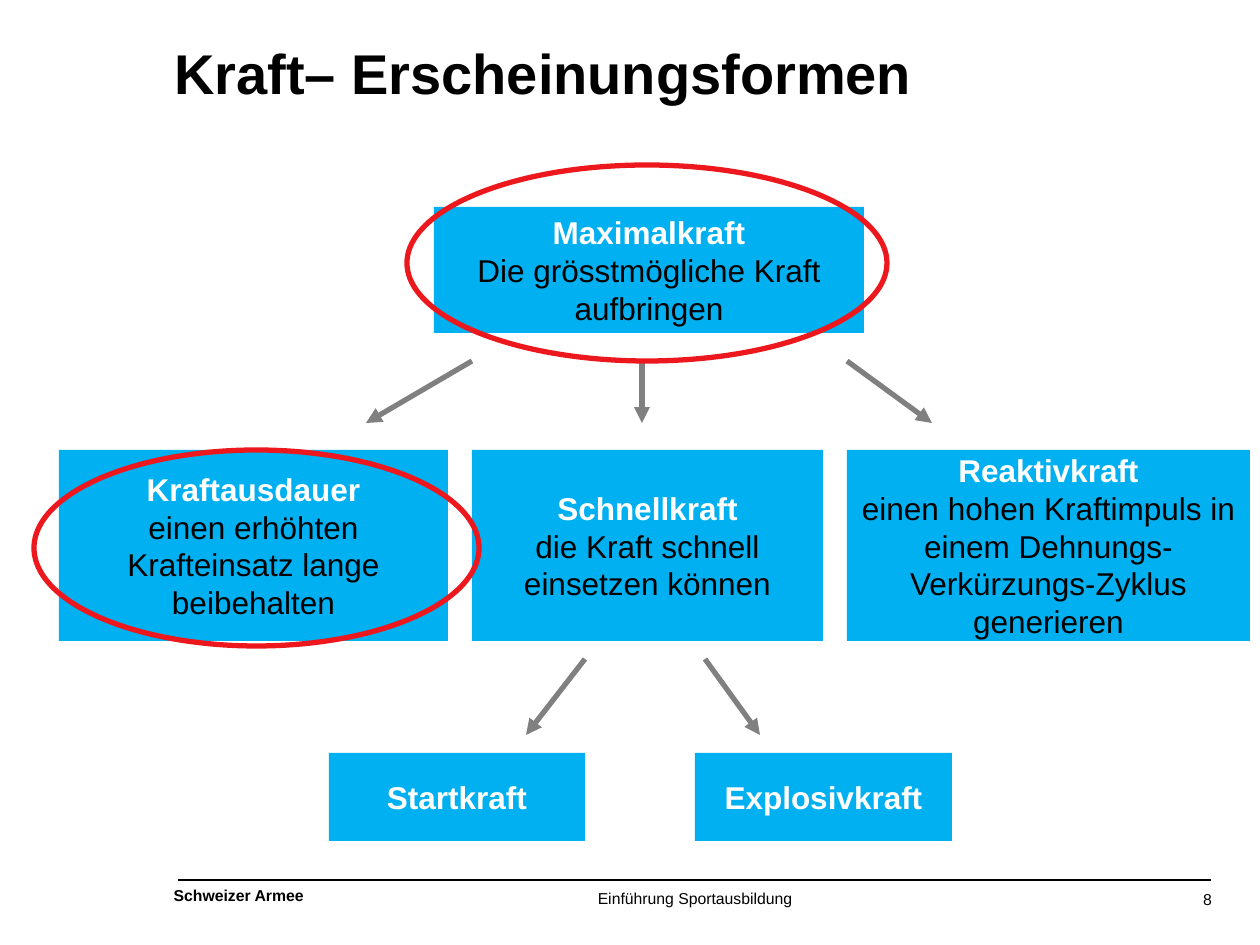
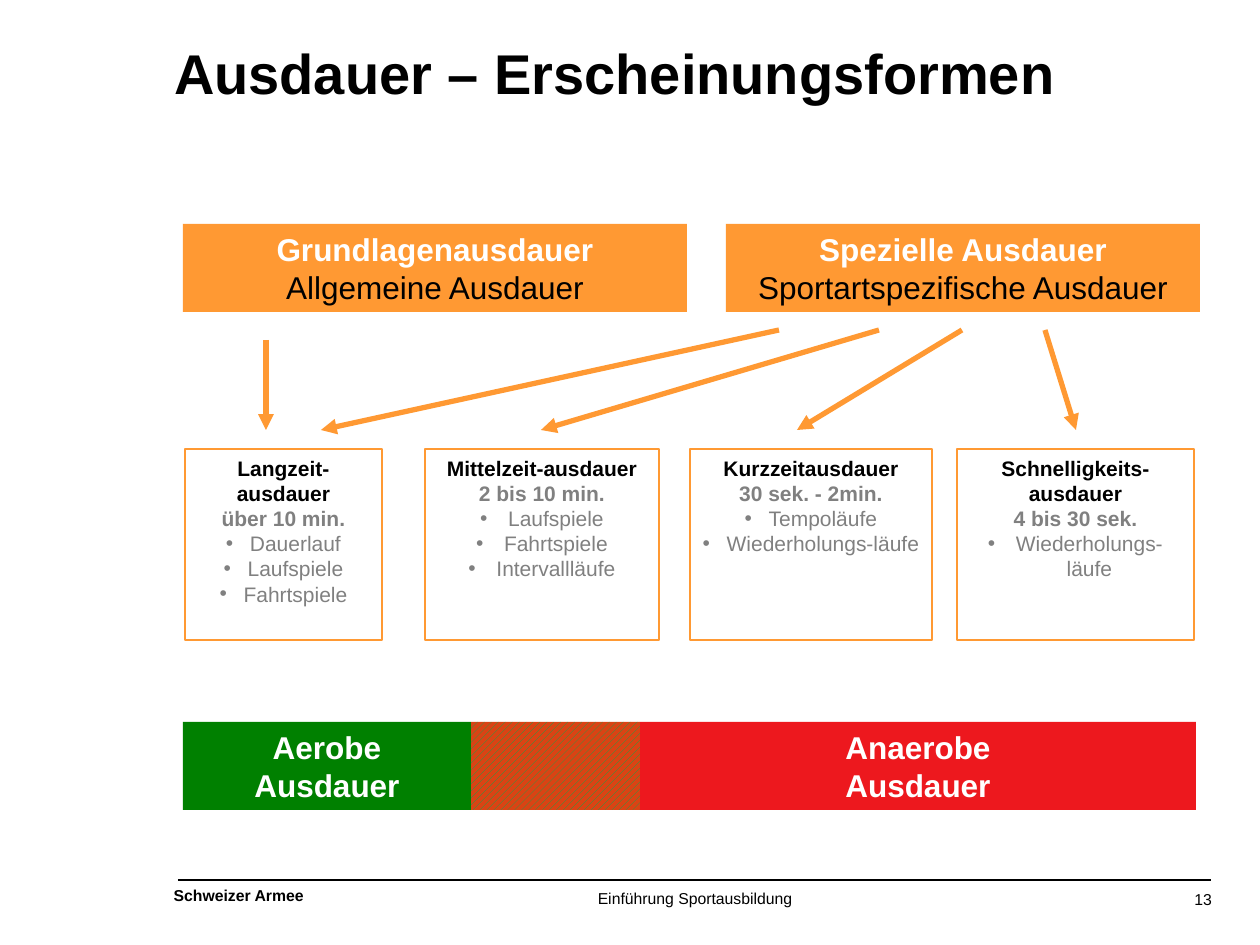
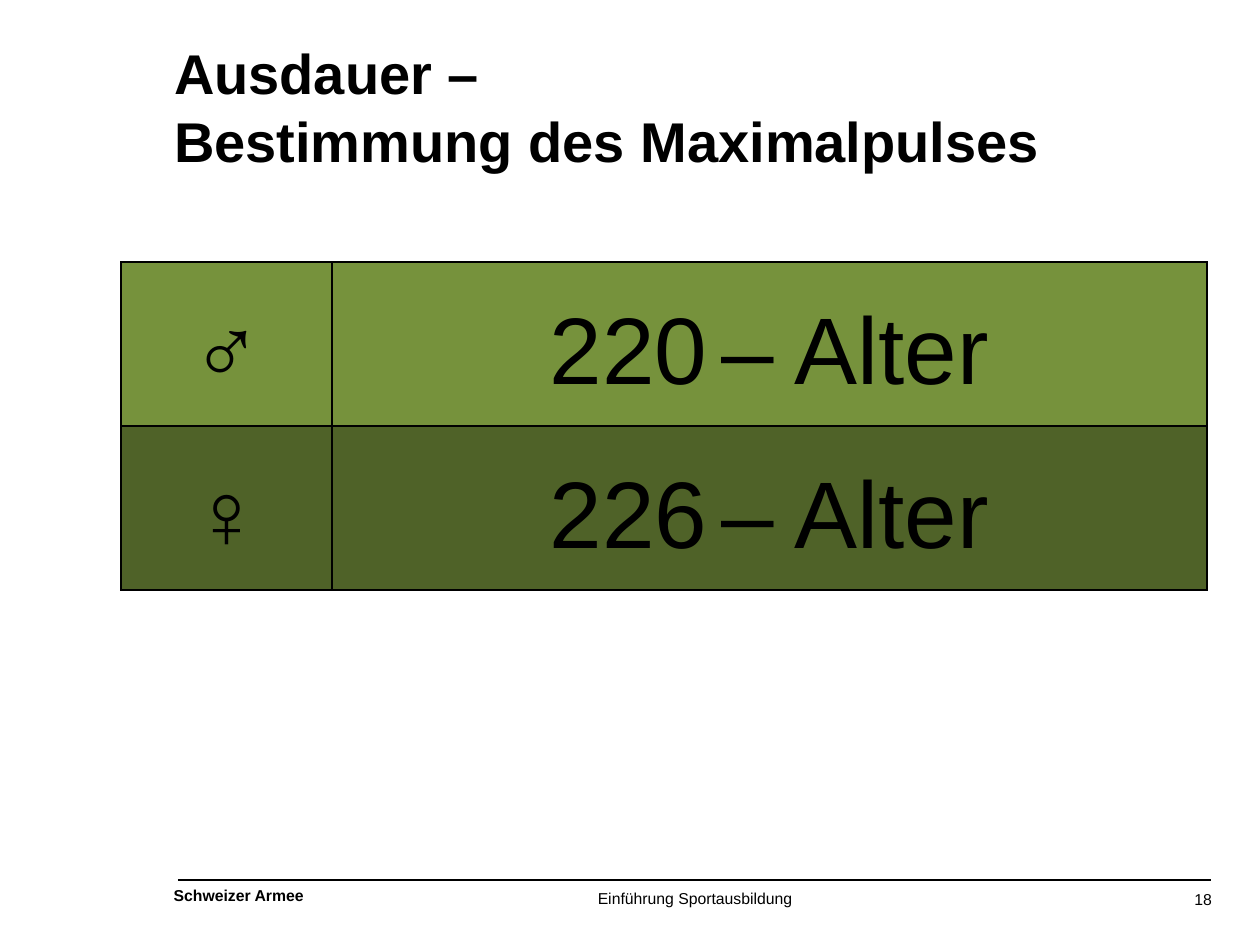
from lxml.etree import SubElement
from pptx import Presentation
from pptx.dml.color import RGBColor
from pptx.enum.dml import MSO_PATTERN
from pptx.enum.shapes import MSO_CONNECTOR, MSO_SHAPE
from pptx.enum.text import MSO_ANCHOR as ANCHOR, PP_ALIGN as ALIGN
from pptx.oxml.ns import qn
from pptx.util import Emu, Pt

BLACK = RGBColor(0x00, 0x00, 0x00)
WHITE = RGBColor(0xFF, 0xFF, 0xFF)
GREY = RGBColor(0x80, 0x80, 0x80)
BLUE = RGBColor(0x00, 0xB0, 0xF0)
RED = RGBColor(0xED, 0x18, 0x1E)
ORANGE = RGBColor(0xFF, 0x99, 0x33)
GREEN = RGBColor(0x00, 0x80, 0x00)
HATCH_GREEN = RGBColor(0x00, 0xB0, 0x50)
HATCH_RED = RGBColor(0xDA, 0x43, 0x14)
OLIVE = RGBColor(0x76, 0x92, 0x3C)
DARK_OLIVE = RGBColor(0x4F, 0x62, 0x28)

FONT = "Arial"
# (text, bold, box)
FOOTERS = [
    ("Schweizer Armee", True, (170, 882, 140, 26)),
    ("Einführung Sportausbildung", False, (590, 881, 212, 54)),
]

# Strength: (heading, explanation, box)
STRENGTH_BOXES = [
    ("Maximalkraft", "Die grösstmögliche Kraft aufbringen", (434, 207, 430, 126)),
    ("Kraftausdauer", "einen erhöhten Krafteinsatz lange beibehalten", (59, 450, 389, 191)),
    ("Schnellkraft", "die Kraft schnell einsetzen können", (472, 450, 351, 191)),
    ("Reaktivkraft", "einen hohen Kraftimpuls in einem Dehnungs-Verkürzungs-Zyklus generieren",
     (847, 450, 403, 191)),
    ("Startkraft", "", (329, 753, 256, 88)),
    ("Explosivkraft", "", (695, 753, 257, 88)),
]
STRENGTH_ARROWS = [
    (642, 360, 642, 423), (472, 361, 366, 423), (847, 361, 932, 423),
    (585, 659, 526, 735), (705, 659, 760, 735),
]
HIGHLIGHTS = [(407, 165, 480, 196), (34, 450, 445, 196)]

# Endurance
ENDURANCE_KINDS = [
    ("Grundlagenausdauer", "Allgemeine Ausdauer", (183, 224, 504, 88)),
    ("Spezielle Ausdauer", "Sportartspezifische Ausdauer", (726, 224, 474, 88)),
]
SPECIAL_ARROWS = [(779, 321), (879, 541), (962, 797), (1045, 1076)]  # from x, to x
BASIC_ARROW = (266, 340, 266, 430)
# (left, width, heading, duration, bullet indent, exercises)
DURATIONS = [
    (185, 197, "Langzeit-ausdauer", "über 10 min.", 24, ["Dauerlauf", "Laufspiele", "Fahrtspiele"]),
    (425, 234, "Mittelzeit-ausdauer", "2 bis 10 min.", 28,
     ["Laufspiele", "Fahrtspiele", "Intervallläufe"]),
    (690, 242, "Kurzzeitausdauer", "30 sek. - 2min.", 24, ["Tempoläufe", "Wiederholungs-läufe"]),
    (957, 237, "Schnelligkeits-ausdauer", "4 bis 30 sek.", 28, ["Wiederholungs-läufe"]),
]
AEROBIC, MIXED, ANAEROBIC = [(x, 722, w, 88) for x, w in ((183, 288), (471, 169), (640, 556))]

# Maximum pulse: (sign, number, fill)
PULSE_ROWS = [("♂", "220", OLIVE), ("♀", "226", DARK_OLIVE)]
PULSE_COLS = (211, 875)
PULSE_ROW_H = 164


def px(n):
    return Emu(round(n * 914400 / 126))


def add_text(p, text, size, color=BLACK, bold=False):
    for i, part in enumerate(text.split("\n")):
        if i:
            p.add_line_break()
        r = p.add_run()
        r.text = part
        f = r.font
        f.name, f.size, f.bold = FONT, Pt(size), bold
        f.color.rgb = color


def add_label(sp, text, size, bold=False, align=ALIGN.LEFT, wrap=False):
    """Write one paragraph at the top of a shape, without margins."""
    tf = sp.text_frame
    tf.margin_left = tf.margin_right = tf.margin_top = tf.margin_bottom = 0
    tf.word_wrap = wrap
    tf.vertical_anchor = ANCHOR.TOP
    tf.paragraphs[0].alignment = align
    add_text(tf.paragraphs[0], text, size, bold=bold)


def add_shape(slide, box, fill=None, line=None, width=0.75, kind=MSO_SHAPE.RECTANGLE):
    sp = slide.shapes.add_shape(kind, *map(px, box))
    sp.shadow.inherit = False
    if fill is None:
        sp.fill.background()
    else:
        sp.fill.solid()
        sp.fill.fore_color.rgb = fill
    if line is None:
        sp.line.fill.background()
    else:
        sp.line.color.rgb = line
        sp.line.width = Pt(width)
    return sp


def fill_lines(sp, lines, size, anchor=ANCHOR.TOP):
    """Write centred paragraphs given as (text, colour, bold, bullet indent)."""
    tf = sp.text_frame
    tf.word_wrap = True
    tf.vertical_anchor = anchor
    for i, (text, color, bold, indent) in enumerate(lines):
        p = tf.add_paragraph() if i else tf.paragraphs[0]
        p.alignment = ALIGN.CENTER
        if indent:
            pPr = p._p.get_or_add_pPr()
            pPr.set("marL", str(px(indent)))
            pPr.set("indent", str(-px(indent)))
            SubElement(pPr, qn("a:buFont"), typeface=FONT)
            SubElement(pPr, qn("a:buChar"), char="•")
        add_text(p, text, size, color, bold)


def add_headed_box(slide, heading, explanation, box, fill, anchor):
    lines = [(heading, WHITE, True, 0)]
    if explanation:
        lines.append((explanation, BLACK, False, 0))
    fill_lines(add_shape(slide, box, fill), lines, 18, anchor)


def add_line(slide, ends, color, width, arrow=False):
    c = slide.shapes.add_connector(MSO_CONNECTOR.STRAIGHT, *map(px, ends))
    c.line.color.rgb = color
    c.line.width = Pt(width)
    if arrow:
        SubElement(c.line._get_or_add_ln(), qn("a:tailEnd"), type="triangle")
    SubElement(c._element.spPr, qn("a:effectLst"))


def add_slide(prs, title, number):
    slide = prs.slides.add_slide(prs.slide_layouts[6])
    add_line(slide, (178, 880, 1211, 880), BLACK, 0.75)
    for text, bold, box in FOOTERS:
        sp = add_shape(slide, box, kind=MSO_SHAPE.OCTAGON)
        sp.adjustments[0] = 0.29
        add_label(sp, text, 9, bold)
    number_box = slide.shapes.add_textbox(*map(px, (1181, 890, 31, 18)))
    add_label(number_box, str(number), 9, align=ALIGN.RIGHT)
    title_box = slide.shapes.add_textbox(*map(px, (174, 39, 1028, 136)))
    add_label(title_box, title, 32, bold=True, wrap=True)
    return slide


def build_strength(prs):
    slide = add_slide(prs, "Kraft– Erscheinungsformen", 8)
    for ends in STRENGTH_ARROWS:
        add_line(slide, ends, GREY, 3, arrow=True)
    for heading, explanation, box in STRENGTH_BOXES:
        add_headed_box(slide, heading, explanation, box, BLUE, ANCHOR.MIDDLE)
    for box in HIGHLIGHTS:
        add_shape(slide, box, line=RED, width=3, kind=MSO_SHAPE.OVAL)


def build_endurance(prs):
    slide = add_slide(prs, "Ausdauer – Erscheinungsformen", 13)
    for heading, explanation, box in ENDURANCE_KINDS:
        add_headed_box(slide, heading, explanation, box, ORANGE, ANCHOR.TOP)
    for ends in [BASIC_ARROW] + [(x1, 330, x2, 430) for x1, x2 in SPECIAL_ARROWS]:
        add_line(slide, ends, ORANGE, 3, arrow=True)
    for left, width, heading, duration, indent, exercises in DURATIONS:
        lines = [(heading, BLACK, True, 0), (duration, GREY, True, 0)]
        lines += [(exercise, GREY, False, indent) for exercise in exercises]
        fill_lines(add_shape(slide, (left, 449, width, 191), line=ORANGE), lines, 12)
    add_headed_box(slide, "Aerobe\nAusdauer", "", AEROBIC, GREEN, ANCHOR.TOP)
    add_headed_box(slide, "Anaerobe\nAusdauer", "", ANAEROBIC, RED, ANCHOR.TOP)
    fill = add_shape(slide, MIXED).fill
    fill.patterned()
    fill.pattern = MSO_PATTERN.WIDE_UPWARD_DIAGONAL
    fill.fore_color.rgb = HATCH_GREEN
    fill.back_color.rgb = HATCH_RED


def fill_cell(cell, runs, fill):
    cell.margin_left = cell.margin_right = px(5)
    cell.margin_top = cell.margin_bottom = 0
    cell.vertical_anchor = ANCHOR.MIDDLE
    p = cell.text_frame.paragraphs[0]
    p.alignment = ALIGN.CENTER
    p.line_spacing = 1.15
    for text, size in runs:
        add_text(p, text, size)
    tcPr = cell._tc.get_or_add_tcPr()
    for side in ("lnL", "lnR", "lnT", "lnB"):
        ln = SubElement(tcPr, qn("a:" + side), w=str(Pt(1)))
        SubElement(SubElement(ln, qn("a:solidFill")), qn("a:srgbClr"), val=str(BLACK))
    cell.fill.solid()
    cell.fill.fore_color.rgb = fill


def build_pulse(prs):
    slide = add_slide(prs, "Ausdauer –\nBestimmung des Maximalpulses", 18)
    rows, cols = len(PULSE_ROWS), len(PULSE_COLS)
    box = (121, 262, sum(PULSE_COLS), rows * PULSE_ROW_H)
    table = slide.shapes.add_table(rows, cols, *map(px, box)).table
    table.first_row = table.horz_banding = False
    for col, width in zip(table.columns, PULSE_COLS):
        col.width = px(width)
    for i, (sign, number, fill) in enumerate(PULSE_ROWS):
        table.rows[i].height = px(PULSE_ROW_H)
        fill_cell(table.cell(i, 0), [(sign, 54)], fill)
        fill_cell(table.cell(i, 1), [(number, 54), (" ", 28), ("– Alter", 54)], fill)


def main():
    prs = Presentation()
    prs.slide_width, prs.slide_height = px(1260), px(945)
    build_strength(prs)
    build_endurance(prs)
    build_pulse(prs)
    prs.save("out.pptx")


if __name__ == "__main__":
    main()
